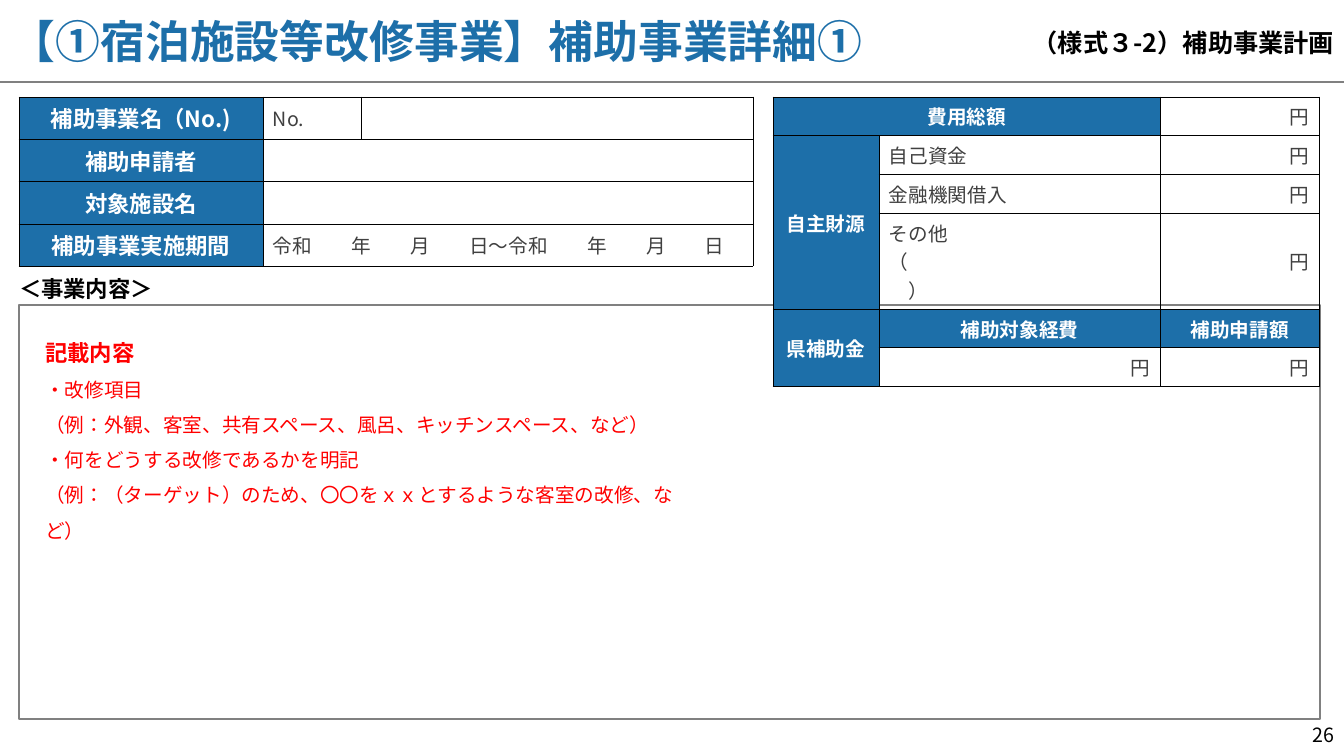
from lxml import etree
from pptx import Presentation
from pptx.dml.color import RGBColor
from pptx.enum.lang import MSO_LANGUAGE_ID
from pptx.enum.shapes import MSO_CONNECTOR, MSO_SHAPE
from pptx.enum.text import MSO_ANCHOR, PP_ALIGN
from pptx.oxml.ns import qn
from pptx.util import Pt

LEFT, CENTER, RIGHT = PP_ALIGN.LEFT, PP_ALIGN.CENTER, PP_ALIGN.RIGHT
TOP, MIDDLE = MSO_ANCHOR.TOP, MSO_ANCHOR.MIDDLE
STRAIGHT, RECTANGLE = MSO_CONNECTOR.STRAIGHT, MSO_SHAPE.RECTANGLE
JAPANESE = MSO_LANGUAGE_ID.JAPANESE
BLUE = RGBColor(0x1D, 0x6F, 0xA9)
GRAY = RGBColor(0x80, 0x80, 0x80)
DARK = RGBColor(0x40, 0x40, 0x40)
BLACK = RGBColor(0, 0, 0)
WHITE = RGBColor(0xFF, 0xFF, 0xFF)
RED = RGBColor(0xFF, 0, 0)
FONT = "Noto Sans CJK JP"
WIDTH, HEIGHT = 960, 540


def style(p, size, color, bold=False, align=LEFT):
    """Format a paragraph and its runs, East Asian text included."""
    p.alignment = align
    for r in p.runs:
        r.font.name, r.font.size, r.font.bold = FONT, Pt(size), bold
        r.font.color.rgb = color
        r.font.language_id = JAPANESE
        ea = etree.Element(qn("a:ea"), typeface=FONT)
        r.font._element.find(qn("a:latin")).addnext(ea)


def add_text(s, box, text, size, color, bold=False, align=LEFT, anchor=TOP, inset=None):
    """Add a wrapped text box and return its text frame."""
    tf = s.shapes.add_textbox(*map(Pt, box)).text_frame
    tf.word_wrap, tf.vertical_anchor = True, anchor
    if inset is not None:
        tf.margin_left = tf.margin_right = tf.margin_top = tf.margin_bottom = Pt(inset)
    tf.text = text
    for p in tf.paragraphs:
        style(p, size, color, bold, align)
    return tf


def add_borders(cell):
    """Draw thin black lines on the four sides of a cell."""
    tcPr = cell._tc.get_or_add_tcPr()
    for side in ("lnL", "lnR", "lnT", "lnB"):
        ln = etree.SubElement(tcPr, qn(f"a:{side}"), w=str(Pt(0.5)))
        fill = etree.SubElement(ln, qn("a:solidFill"))
        etree.SubElement(fill, qn("a:srgbClr"), val=str(BLACK))


def add_form(s, left, top, widths, heights, rows, merges, labels, label_size, aligns):
    """Add a bordered form table whose label cells are blue."""
    frame = s.shapes.add_table(len(rows), len(widths), Pt(left), Pt(top),
                               Pt(sum(widths)), Pt(sum(heights)))
    table = frame.table
    table.first_row = table.horz_banding = False
    for column, width in zip(table.columns, widths):
        column.width = Pt(width)
    for row, height in zip(table.rows, heights):
        row.height = Pt(height)
    for i, texts in enumerate(rows):
        for j, text in enumerate(texts):
            cell = table.cell(i, j)
            cell.vertical_anchor = MIDDLE
            add_borders(cell)
            cell.text = text
            p = cell.text_frame.paragraphs[0]
            if (i, j) in labels:
                cell.fill.solid()
                cell.fill.fore_color.rgb = BLUE
                style(p, label_size, WHITE, True, CENTER)
            else:
                cell.fill.background()
                style(p, 14, DARK, align=aligns.get((i, j), aligns.get(j, LEFT)))
    for first, last in merges:
        table.cell(*first).merge(table.cell(*last))


def add_header(s, left, top, width, height):
    """Add the title, the form number and the rule below them."""
    rule = s.shapes.add_connector(STRAIGHT, Pt(left), Pt(top + height),
                                  Pt(left + width), Pt(top + height))
    rule.line.color.rgb, rule.line.width = GRAY, Pt(1.5)
    etree.SubElement(rule._element.spPr, qn("a:effectLst"))
    add_text(s, (left + 0.7, top, 762.5, 57.6), "【①宿泊施設等改修事業】補助事業詳細①",
             32, BLUE, True, anchor=MIDDLE)
    add_text(s, (left + width - 364, top + 6.5, 364, 47.5), "（様式３-2）補助事業計画",
             18, BLACK, True, RIGHT, MIDDLE)


def add_project(s, left, top):
    """Add the project table on the left."""
    rows = [("補助事業名（No.)", "No.", ""),
            ("補助申請者", "", ""),
            ("対象施設名", "", ""),
            ("補助事業実施期間", "令和　　年　　月　　日～令和　　年　　月　　日", "")]
    add_form(s, left, top, (174.2, 70.6, 279.4), [30.2] * 4, rows,
             [((i, 1), (i, 2)) for i in (1, 2, 3)],
             {(i, 0) for i in range(4)}, 16, {})


def add_funding(s, left, top):
    """Add the cost and funding table on the right."""
    rows = [("費用総額", "", "円"),
            ("自主財源", "自己資金", "円"),
            ("", "金融機関借入", "円"),
            ("", "その他（　　　　　　　　　　　　　）", "円"),
            ("県補助金", "補助対象経費", "補助申請額"),
            ("", "円", "円")]
    add_form(s, left, top, (75.6, 201.2, 113.4),
             [27.6] * 3 + [68.8] + [27.6] * 2, rows,
             [((0, 0), (0, 1)), ((1, 0), (3, 0)), ((4, 0), (5, 0))],
             {(0, 0), (0, 1), (4, 1), (4, 2)} | {(i, 0) for i in range(1, 6)},
             14, {2: RIGHT, (5, 1): RIGHT})


def add_content_box(s, left, top, width, height):
    """Add the outlined content area and its heading."""
    box = s.shapes.add_shape(RECTANGLE, Pt(left), Pt(top), Pt(width), Pt(height))
    box.shadow.inherit = False
    box.fill.background()
    box.line.color.rgb, box.line.width = GRAY, Pt(1.5)
    tf = add_text(s, (left, top - 31, 219, 40), "＜事業内容＞", 16, BLACK, True, inset=0)
    tf.paragraphs[0].line_spacing = 1.5


def add_guidance(s, left, top, width, height):
    """Add the red notes on what to write."""
    lines = ["記載内容", "・改修項目",
             "（例：外観、客室、共有スペース、風呂、キッチンスペース、など）",
             "・何をどうする改修であるかを明記",
             "（例：（ターゲット）のため、〇〇をｘｘとするような客室の改修、など）"]
    tf = add_text(s, (left, top, width, height), "\n".join(lines), 14, RED, inset=0)
    for p in tf.paragraphs:
        p.line_spacing = 1.5
    for r in tf.paragraphs[0].runs:
        r.font.size, r.font.bold = Pt(16), True


def main():
    """Build the slide and save it."""
    prs = Presentation()
    prs.slide_width, prs.slide_height = Pt(WIDTH), Pt(HEIGHT)
    s = prs.slides.add_slide(prs.slide_layouts[6])
    add_header(s, 0, 0, WIDTH, 58.8)
    add_text(s, (WIDTH - 48, HEIGHT - 27.4, 48, 27.4), "26", 14, BLACK, align=RIGHT)
    add_content_box(s, 13.6, 218, 929, 295.6)
    add_project(s, 13.6, 69.3)
    add_funding(s, 552.2, 69.3)
    add_guidance(s, 32.4, 232.4, 468, 243.4)
    prs.save("out.pptx")


if __name__ == "__main__":
    main()
